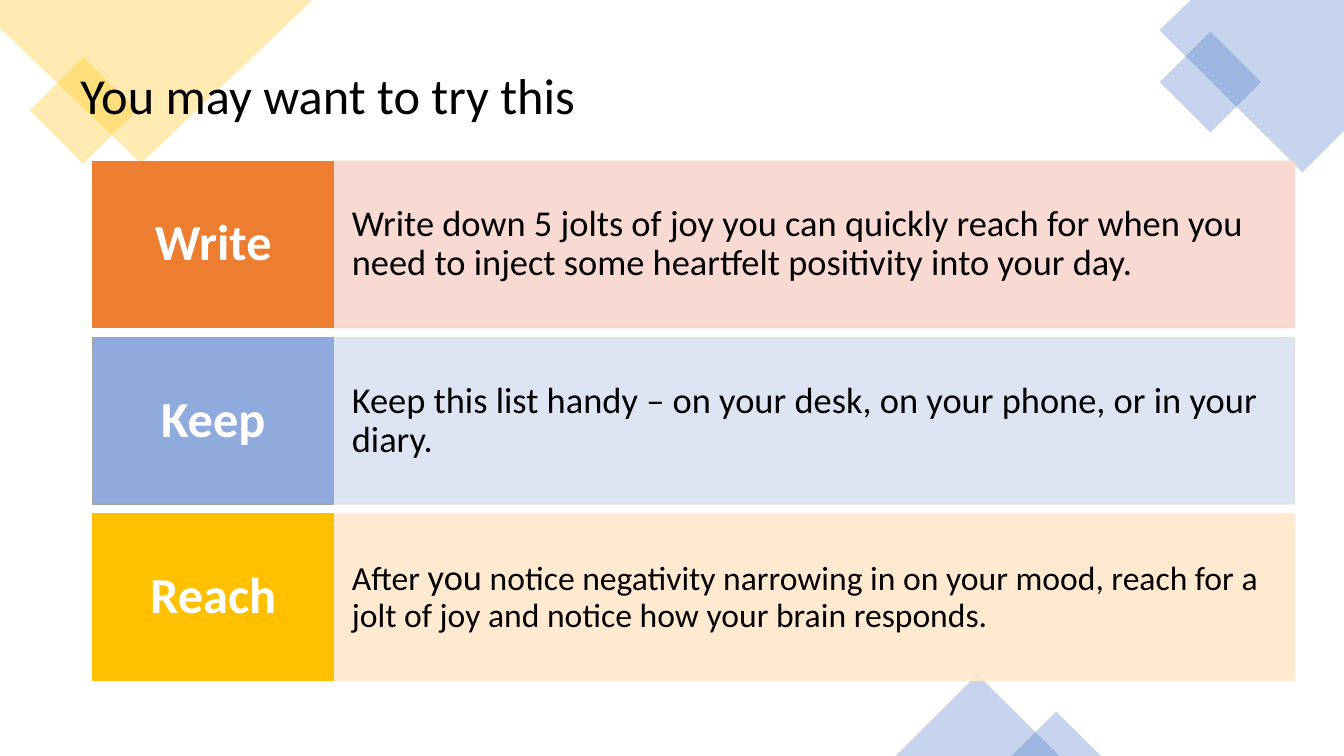
from dataclasses import dataclass
from typing import NamedTuple

from lxml import etree
from pptx import Presentation
from pptx import util as u
from pptx.dml.color import RGBColor
from pptx.enum import shapes, text
from pptx.oxml import ns

PX = 9144


@dataclass(frozen=True)
class Theme:
    font: str = "Calibri"
    ink: str = "000000"
    paper: str = "FFFFFF"
    gold: str = "FFC000"
    blue: str = "4472C4"
    heading: int = 36
    body: int = 26
    body_small: int = 24
    decor_alpha: int = 30
    panel_alpha: int = 90


class Box(NamedTuple):
    left: int
    top: int
    width: int
    height: int


class Span(NamedTuple):
    text: str
    size: int


class Decor(NamedTuple):
    kind: shapes.MSO_SHAPE
    box: Box
    color: str
    rotation: int


class Corner(NamedTuple):
    points: list[tuple[int, int]]
    color: str


class Step(NamedTuple):
    label: str
    spans: list[Span]
    label_fill: str
    label_line: str
    panel_fill: str
    panel_line: str


T = Theme()

DECOR = [
    Decor(shapes.MSO_SHAPE.RECTANGLE, Box(45, 72, 75, 75), T.gold, 45),
    Decor(shapes.MSO_SHAPE.RECTANGLE, Box(1165, 46, 71, 71), T.blue, 45),
    Decor(shapes.MSO_SHAPE.ISOSCELES_TRIANGLE, Box(888, 669, 163, 81), T.blue, 0),
    Decor(shapes.MSO_SHAPE.ISOSCELES_TRIANGLE, Box(1003, 706, 89, 44), T.blue, 0),
]

CORNERS = [
    Corner([(0, 0), (310, 0), (140, 162), (0, 28)], T.gold),
    Corner([(1181, 0), (1333, 0), (1333, 130), (1292, 171), (1150, 30)], T.blue),
]

STEPS = [
    Step("Write",
         [Span("Write down 5 jolts of joy you can quickly reach for when you need to "
               "inject some heartfelt positivity into your day.", T.body)],
         "ED7D31", "ED7D31", "F8D7CE", "F8D7CE"),
    Step("Keep",
         [Span("Keep this list handy – on your desk, on your phone, or in your diary.",
               T.body)],
         "8FAADC", "A5A5A5", "DAE3F3", "E1E1E1"),
    Step("Reach",
         [Span("After ", T.body_small),
          Span("you", T.body),
          Span(" notice negativity narrowing in on your mood, reach for a jolt of joy "
               "and notice how your brain responds.", T.body_small)],
         T.gold, T.gold, "FFE8CC", "FFE8CC"),
]

ROW_TOP, ROW_PITCH, ROW_HEIGHT = 160, 175, 165
LABEL_LEFT, LABEL_WIDTH = 92, 239
PANEL_LEFT, PANEL_WIDTH = 330, 954


def px(n: int) -> u.Emu:
    return u.Emu(n * PX)


def place(box: Box) -> list[u.Emu]:
    return [px(n) for n in box]


def paint(sp, fill: str, line: str | None = None, alpha: int = 100) -> None:
    sp.shadow.inherit = False
    sp.fill.solid()
    sp.fill.fore_color.rgb = RGBColor.from_string(fill)
    if line:
        sp.line.color.rgb = RGBColor.from_string(line)
        sp.line.width = u.Pt(1)
    else:
        sp.line.fill.background()
    if alpha < 100:
        for color in sp._element.spPr.iter(ns.qn("a:srgbClr")):
            etree.SubElement(color, ns.qn("a:alpha")).set("val", str(alpha * 1000))


def write(sp, spans: list[Span], color: str, inset: tuple[int, int],
          align: text.PP_ALIGN = text.PP_ALIGN.LEFT, bold: bool = False) -> None:
    tf = sp.text_frame
    tf.word_wrap = True
    tf.vertical_anchor = text.MSO_ANCHOR.MIDDLE
    tf.margin_left = tf.margin_right = px(inset[0])
    tf.margin_top = tf.margin_bottom = px(inset[1])
    p = tf.paragraphs[0]
    p.alignment = align
    p.line_spacing = 0.9
    for span in spans:
        r = p.add_run()
        r.text = span.text
        r.font.name = T.font
        r.font.size = u.Pt(span.size)
        r.font.bold = bold
        r.font.color.rgb = RGBColor.from_string(color)


def draw_decor(s, decor: Decor) -> None:
    sp = s.shapes.add_shape(decor.kind, *place(decor.box))
    sp.rotation = decor.rotation
    paint(sp, decor.color, alpha=T.decor_alpha)


def draw_corner(s, corner: Corner) -> None:
    start, *rest = corner.points
    outline = s.shapes.build_freeform(*start, scale=PX)
    outline.add_line_segments(rest, close=True)
    paint(outline.convert_to_shape(), corner.color, alpha=T.decor_alpha)


def draw_title(s, title: str) -> None:
    sp = s.shapes.add_textbox(*place(Box(70, 35, 1193, 124)))
    write(sp, [Span(title, T.heading)], T.ink, (10, 5))


def draw_step(s, step: Step, top: int) -> None:
    rect = shapes.MSO_SHAPE.RECTANGLE
    panel = s.shapes.add_shape(
        rect, *place(Box(PANEL_LEFT, top, PANEL_WIDTH, ROW_HEIGHT)))
    paint(panel, step.panel_fill, step.panel_line, T.panel_alpha)
    write(panel, step.spans, T.ink, (19, 42))
    label = s.shapes.add_shape(
        rect, *place(Box(LABEL_LEFT, top, LABEL_WIDTH, ROW_HEIGHT)))
    paint(label, step.label_fill, step.label_line)
    write(label, [Span(step.label, T.heading)], T.paper, (13, 16),
          text.PP_ALIGN.CENTER, bold=True)


def main() -> None:
    prs = Presentation()
    prs.slide_width, prs.slide_height = px(1333), px(750)
    s = prs.slides.add_slide(prs.slide_layouts[6])
    for corner in CORNERS:
        draw_corner(s, corner)
    for decor in DECOR:
        draw_decor(s, decor)
    draw_title(s, "You may want to try this")
    for i, step in enumerate(STEPS):
        draw_step(s, step, ROW_TOP + i * ROW_PITCH)
    prs.save("out.pptx")


if __name__ == "__main__":
    main()
